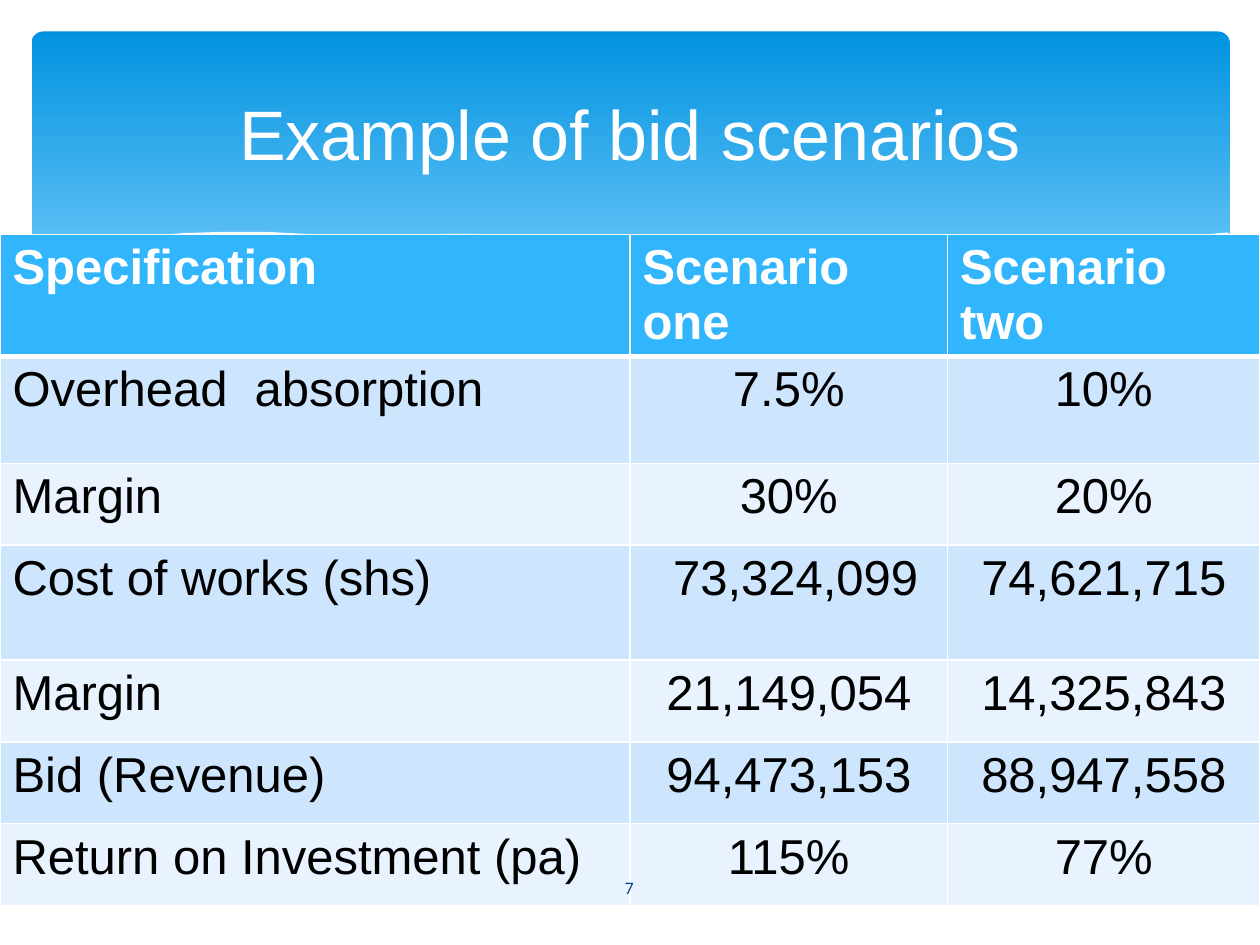
from dataclasses import dataclass

from lxml.etree import SubElement
from pptx import Presentation
from pptx.dml.color import RGBColor
from pptx.enum.dml import MSO_LINE
from pptx.enum.shapes import MSO_SHAPE
from pptx.enum.text import MSO_ANCHOR, PP_ALIGN
from pptx.oxml.ns import qn
from pptx.util import Inches, Pt

COLORS = {
    "white": "FFFFFF",
    "black": "000000",
    "banner_top": "0293E0",
    "banner_bottom": "83D3FE",
    "wave": "C6E7FC",
    "header": "31B6FD",
    "band_dark": "CEE5FE",
    "band_light": "E8F3FF",
    "page_number": "073E87",
}


@dataclass
class Wave:
    points: list[tuple[float, float]]
    fill: str | None = None
    opacity: int = 100


WAVES = [
    Wave([(9.75, 2), (9.48, 2.04), (9.06, 2.13), (8.61, 2.23), (8.05, 2.37), (7.53, 2.48),
          (7.06, 2.57), (6.61, 2.65), (7.05, 2.71), (7.57, 2.76), (8.03, 2.78), (8.54, 2.76),
          (8.97, 2.7), (9.35, 2.62), (9.63, 2.52), (9.76, 2.47), (9.76, 2)], "wave", 29),
    Wave([(8.93, 2.73), (8.37, 2.65), (7.75, 2.54), (7.06, 2.4), (6.29, 2.22), (5.84, 2.11),
          (5.41, 2.03), (4.89, 1.94), (4.42, 1.89), (3.99, 1.86), (3.61, 1.85), (3.28, 1.87),
          (2.86, 1.91), (3.42, 1.99), (4.04, 2.11), (4.49, 2.22), (5.3, 2.4), (6.01, 2.55),
          (6.65, 2.66), (7.22, 2.74), (7.73, 2.77), (8.18, 2.78), (8.57, 2.77)], "wave", 40),
    Wave([(3.09, 1.95), (3.28, 1.92), (3.63, 1.89), (4.01, 1.87), (4.5, 1.88), (5.1, 1.92),
          (5.82, 2), (6.36, 2.08), (6.95, 2.19), (7.6, 2.33), (8.31, 2.51), (9.07, 2.72)]),
    Wave([(6.13, 2.57), (6.53, 2.46), (6.95, 2.35), (7.48, 2.23), (8.06, 2.1), (8.66, 1.99),
          (9.1, 1.92), (9.51, 1.87), (9.75, 1.85)]),
    Wave([(9.77, 2.46), (9.5, 2.56), (9.2, 2.65), (8.87, 2.71), (8.5, 2.75), (8.09, 2.77),
          (7.61, 2.75), (7.08, 2.7), (6.48, 2.62), (5.79, 2.5), (5.03, 2.33), (4.47, 2.2),
          (3.91, 2.07), (3.4, 1.97), (2.92, 1.9), (2.5, 1.86), (2.11, 1.84), (1.77, 1.84),
          (1.46, 1.85), (1.19, 1.87), (0.95, 1.91), (0.67, 1.97), (0.46, 2.03), (0.29, 2.1),
          (0.23, 2.13), (0.23, 3.29), (9.77, 3.29)], "white"),
]

COLUMN_WIDTHS = [5, 2.52, 2.48]
ROW_HEIGHTS = [0.95, 0.85, 0.65, 0.91, 0.65, 0.65, 0.65]
ROWS = [
    ("Specification", "Scenario one", "Scenario two"),
    ("Overhead  absorption", "7.5%", "10%"),
    ("Margin", "30%", "20%"),
    ("Cost of works (shs)", " 73,324,099", "74,621,715"),
    ("Margin", "21,149,054", "14,325,843"),
    ("Bid (Revenue)", "94,473,153", "88,947,558"),
    ("Return on Investment (pa)", "115%", "77%"),
]


def rgb(name: str) -> RGBColor:
    return RGBColor.from_string(COLORS[name])


def write_text(frame, text: str, *, size: float, color: str, font: str = "Arial",
               bold: bool = False, align=PP_ALIGN.LEFT) -> None:
    paragraph = frame.paragraphs[0]
    paragraph.alignment = align
    span = paragraph.add_run()
    span.text = text
    span.font.name = font
    span.font.size = Pt(size)
    span.font.bold = bold
    span.font.color.rgb = rgb(color)


def add_label(page, text: str, left: float, top: float, width: float, height: float,
              **text_format) -> None:
    box = page.shapes.add_textbox(Inches(left), Inches(top), Inches(width), Inches(height))
    box.text_frame.word_wrap = True
    box.text_frame.vertical_anchor = MSO_ANCHOR.MIDDLE
    write_text(box.text_frame, text, align=PP_ALIGN.CENTER, **text_format)


def add_banner(page) -> None:
    banner = page.shapes.add_shape(MSO_SHAPE.ROUNDED_RECTANGLE, Inches(0.25), Inches(0.25),
                                   Inches(9.51), Inches(2.7))
    banner.adjustments[0] = 0.034
    banner.shadow.inherit = False
    banner.line.fill.background()
    banner.fill.gradient()
    banner.fill.gradient_angle = 270
    stops = zip(banner.fill.gradient_stops, [(0, "banner_top"), (0.9, "banner_bottom")])
    for stop, (position, color) in stops:
        stop.position = position
        stop.color.rgb = rgb(color)


def add_wave(page, wave: Wave) -> None:
    """Draw a filled wave, or a thin white curve when the wave has no fill."""
    builder = page.shapes.build_freeform(*map(Inches, wave.points[0]), scale=1.0)
    builder.add_line_segments([(Inches(x), Inches(y)) for x, y in wave.points[1:]],
                              close=wave.fill is not None)
    shape = builder.convert_to_shape()
    shape.shadow.inherit = False
    if wave.fill is None:
        shape.fill.background()
        shape.line.color.rgb = rgb("white")
        shape.line.width = Pt(0)
        shape.line.dash_style = MSO_LINE.SOLID
        return
    shape.line.fill.background()
    shape.fill.solid()
    shape.fill.fore_color.rgb = rgb(wave.fill)
    if wave.opacity < 100:
        color = shape.fill._xPr.find(qn("a:solidFill"))[0]
        SubElement(color, qn("a:alpha"), val=str(wave.opacity * 1000))


def add_borders(cell, top: float, bottom: float) -> None:
    properties = cell._tc.get_or_add_tcPr()
    for side, width in {"L": 1, "R": 1, "T": top, "B": bottom}.items():
        line = SubElement(properties, qn(f"a:ln{side}"), w=str(Pt(width)))
        fill = SubElement(line, qn("a:solidFill"))
        SubElement(fill, qn("a:srgbClr"), val=COLORS["white"])


def add_scenario_table(page) -> None:
    table = page.shapes.add_table(len(ROWS), len(COLUMN_WIDTHS), Inches(0), Inches(1.86),
                                  Inches(sum(COLUMN_WIDTHS)), Inches(sum(ROW_HEIGHTS))).table
    for column, width in zip(table.columns, COLUMN_WIDTHS):
        column.width = Inches(width)
    for row, height in zip(table.rows, ROW_HEIGHTS):
        row.height = Inches(height)
    for r, values in enumerate(ROWS):
        header = r == 0
        band = "header" if header else "band_dark" if r % 2 else "band_light"
        for c, value in enumerate(values):
            cell = table.cell(r, c)
            add_borders(cell, top=3 if r == 1 else 1, bottom=3 if header else 1)
            cell.fill.solid()
            cell.fill.fore_color.rgb = rgb(band)
            write_text(cell.text_frame, value, size=28, bold=header,
                       color="white" if header else "black",
                       align=PP_ALIGN.LEFT if header or c == 0 else PP_ALIGN.CENTER)


def main() -> None:
    deck = Presentation()
    deck.slide_width, deck.slide_height = Inches(10), Inches(7.5)
    page = deck.slides.add_slide(deck.slide_layouts[6])
    add_banner(page)
    for wave in WAVES:
        add_wave(page, wave)
    add_scenario_table(page)
    add_label(page, "7", 4.36, 6.84, 1.27, 0.4, size=10, color="page_number", font="Calibri")
    add_label(page, "Example of bid scenarios", 0.5, 0.37, 9, 1.37, size=40, color="white")
    deck.save("out.pptx")


if __name__ == "__main__":
    main()
